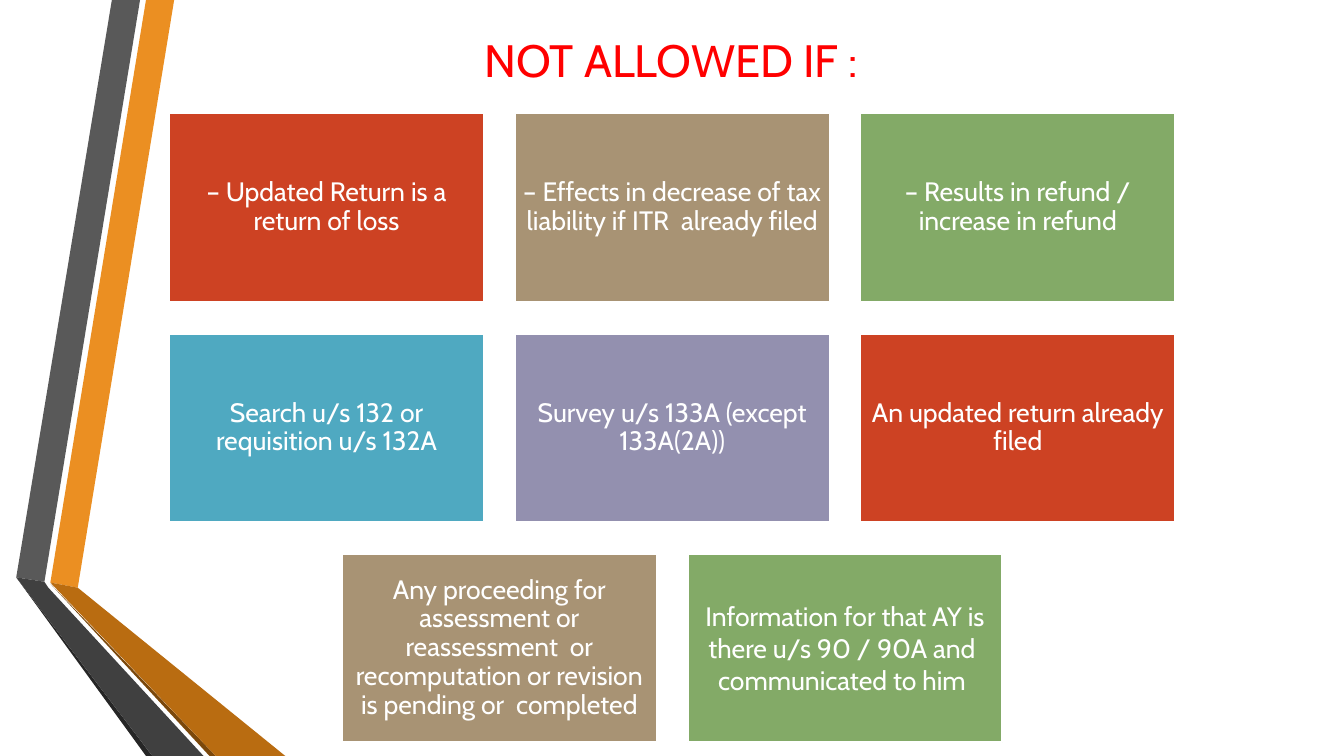
"""Build the slide that lists when an updated return is not allowed."""
from dataclasses import dataclass

from pptx import Presentation
from pptx.dml.color import RGBColor
from pptx.enum.shapes import MSO_SHAPE
from pptx.enum.text import MSO_ANCHOR, MSO_AUTO_SIZE, PP_ALIGN
from pptx.shapes.autoshape import Shape
from pptx.slide import Slide
from pptx.util import Cm, Pt


@dataclass(frozen=True)
class Theme:
    font: str = "Cabin"
    head: float = 32.4
    body: float = 19
    edge: float = 1.25
    white: str = "FFFFFF"
    title: str = "FF0000"
    red: str = "CD4223"
    tan: str = "A89374"
    green: str = "83AA67"
    blue: str = "4FA9C1"
    mauve: str = "9390AF"
    amber: str = "EB8F22"
    ochre: str = "B96C11"
    brown: str = "7B480B"
    grey: str = "595959"
    slate: str = "404040"
    coal: str = "262626"


@dataclass(frozen=True)
class Card:
    text: str
    fill: str
    space: float = 0.9


@dataclass(frozen=True)
class Band:
    fill: str
    points: tuple[tuple[float, float], ...]


THEME = Theme()
WIDE, HIGH = 33.87, 19.05
CARD_W, CARD_H, GAP = 7.93, 4.74, 0.78
STEP_X, STEP_Y = CARD_W + GAP, CARD_H + 0.81
MID_X, TOP = 16.94, 2.86
INSET = 0.2

BANDS = (
    Band(THEME.amber, ((1.27, 14.68), (1.96, 14.81), (4.39, 0), (3.68, 0))),
    Band(THEME.grey, ((3.53, 0), (2.82, 0), (0.41, 14.55), (1.12, 14.66))),
    Band(THEME.coal, ((0.41, 14.55), (3.68, HIGH), (3.84, HIGH))),
    Band(THEME.brown, ((1.27, 14.71), (5.28, HIGH), (5.44, HIGH))),
    Band(THEME.ochre, ((1.27, 14.68), (5.44, HIGH), (7.19, HIGH), (1.96, 14.81))),
    Band(THEME.slate, ((5.13, HIGH), (1.22, 14.81), (1.12, 14.66), (0.41, 14.55), (3.84, HIGH))),
)

ROWS = (
    (
        Card("– Updated Return is a return of loss", THEME.red),
        Card("– Effects in decrease of tax liability if ITR  already filed", THEME.tan),
        Card("– Results in refund / increase in refund", THEME.green),
    ),
    (
        Card("Search u/s 132 or requisition u/s 132A", THEME.blue),
        Card("Survey u/s 133A (except 133A(2A))", THEME.mauve),
        Card("An updated return already filed", THEME.red),
    ),
    (
        Card("Any proceeding for assessment or reassessment  or recomputation "
             "or revision is pending or  completed", THEME.tan),
        Card("Information for that AY is there u/s 90 / 90A and  communicated to him ",
             THEME.green, space=1),
    ),
)


def write(shape: Shape, text: str, *, size: float, color: str,
          space: float = 1, after: float = 0, inset: float = INSET) -> None:
    frame = shape.text_frame
    frame.word_wrap = True
    frame.auto_size = MSO_AUTO_SIZE.NONE
    frame.vertical_anchor = MSO_ANCHOR.MIDDLE
    frame.margin_left = frame.margin_right = Cm(inset)
    frame.margin_top = frame.margin_bottom = Cm(inset)
    para = frame.paragraphs[0]
    para.alignment = PP_ALIGN.CENTER
    para.line_spacing = space
    para.space_after = Pt(after)
    run = para.add_run()
    run.text = text
    run.font.name = THEME.font
    run.font.size = Pt(size)
    run.font.color.rgb = RGBColor.from_string(color)


def paint(shape: Shape, fill: str) -> None:
    shape.shadow.inherit = False
    shape.fill.solid()
    shape.fill.fore_color.rgb = RGBColor.from_string(fill)


def draw_band(slide: Slide, band: Band) -> None:
    first, *rest = [(Cm(x), Cm(y)) for x, y in band.points]
    pen = slide.shapes.build_freeform(*first)
    pen.add_line_segments(rest, close=True)
    shape = pen.convert_to_shape()
    paint(shape, band.fill)
    shape.line.fill.background()


def draw_card(slide: Slide, card: Card, left: float, top: float) -> None:
    shape = slide.shapes.add_shape(
        MSO_SHAPE.RECTANGLE, Cm(left), Cm(top), Cm(CARD_W), Cm(CARD_H))
    paint(shape, card.fill)
    shape.line.color.rgb = RGBColor.from_string(THEME.white)
    shape.line.width = Pt(THEME.edge)
    write(shape, card.text, size=THEME.body, color=THEME.white,
          space=card.space, after=0.35 * THEME.body)


def main() -> None:
    deck = Presentation()
    deck.slide_width, deck.slide_height = Cm(WIDE), Cm(HIGH)
    slide = deck.slides.add_slide(deck.slide_layouts[5])
    for band in BANDS:
        draw_band(slide, band)
    for row, cards in enumerate(ROWS):
        start = MID_X - (len(cards) * STEP_X - GAP) / 2
        for col, card in enumerate(cards):
            draw_card(slide, card, start + col * STEP_X, TOP + row * STEP_Y)
    title = slide.shapes.title
    title.left, title.top = Cm(5.51), Cm(0.76)
    title.width, title.height = Cm(22.81), Cm(1.45)
    write(title, "NOT ALLOWED IF :", size=THEME.head, color=THEME.title, inset=0)
    deck.save("out.pptx")


if __name__ == "__main__":
    main()
